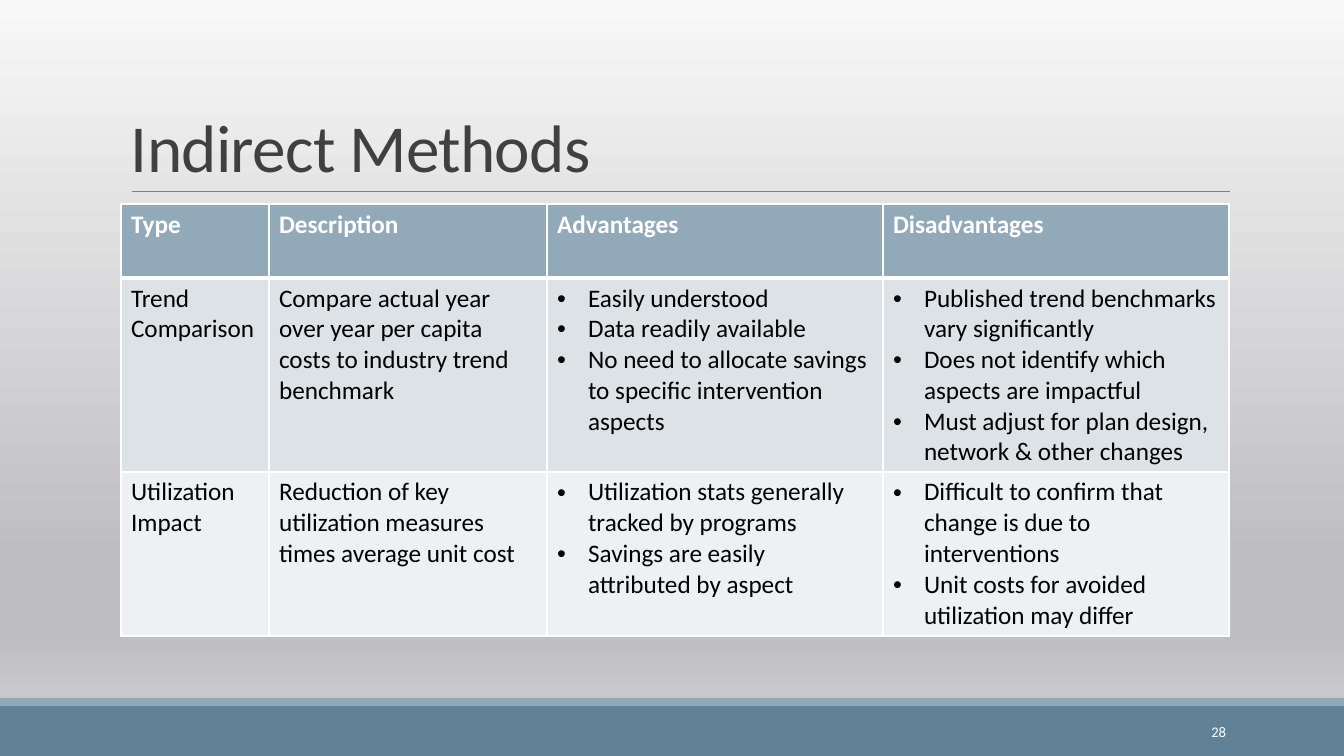
from pptx import Presentation
from pptx import util as u
from pptx.dml.color import RGBColor
from pptx.enum import shapes, text
from pptx.oxml import parse_xml
from pptx.oxml.ns import nsdecls, qn
from lxml import etree

TITLE = "Indirect Methods"
NUMBER = "28"
HEADS = ["Type", "Description", "Advantages", "Disadvantages"]
# A list becomes bullets, a string one plain paragraph.
ROWS = [
    ["Trend Comparison",
     "Compare actual year over year per capita costs to industry trend benchmark",
     ["Easily understood",
      "Data readily available",
      "No need to allocate savings to specific intervention aspects"],
     ["Published trend benchmarks vary significantly",
      "Does not identify which aspects are impactful",
      "Must adjust for plan design, network & other changes"]],
    ["Utilization Impact",
     "Reduction of key utilization measures times average unit cost",
     ["Utilization stats generally tracked by programs",
      "Savings are easily attributed by aspect"],
     ["Difficult to confirm that change is due to interventions",
      "Unit costs for avoided utilization may differ"]],
]


class Theme:
    font = "Calibri"
    white, black, title = "FFFFFF", "000000", "404040"
    dark, accent, rule = "618197", "92A9B9", "808080"
    bands = ["DCE2E6", "EEF1F3"]
    back = [(0, "F8F8F8"), (74, "BEBEC1"), (83, "BEBEC1"), (100, "D4D4D5")]
    head_size, body_size, foot_size = 48, 18, 10.5


WIDE, HIGH = 1344, 756
COLS = [148, 278, 336, 346]
TALL = [74, 194, 164]
LEFT, TOP = 121, 204
INDENT = 31


def px(n):
    return u.Emu(round(n * 914400 / 100.8))


def style(para, size, color, bold=False):
    font = para.font
    font.name, font.size, font.bold = Theme.font, u.Pt(size), bold
    font.color.rgb = RGBColor.from_string(color)


def backdrop(slide):
    fill = slide.background.fill
    fill.gradient()
    fill.gradient_angle = 270
    stops = fill.gradient_stops._gsLst
    for old in list(stops):
        stops.remove(old)
    for spot, color in Theme.back:
        stops.append(parse_xml(
            f'<a:gs {nsdecls("a")} pos="{spot * 1000}"><a:srgbClr val="{color}"/></a:gs>'))


def band(slide, top, tall, color):
    bar = slide.shapes.add_shape(
        shapes.MSO_SHAPE.RECTANGLE, 0, px(top), px(WIDE), px(tall))
    bar.shadow.inherit = False
    bar.fill.solid()
    bar.fill.fore_color.rgb = RGBColor.from_string(color)
    bar.line.fill.background()


def label(slide, box, words, size, color, anchor):
    frame = slide.shapes.add_textbox(*map(px, box)).text_frame
    frame.word_wrap = True
    frame.vertical_anchor = anchor
    para = frame.paragraphs[0]
    para.text = words
    style(para, size, color)
    return para


def rule(slide, left, right, y):
    line = slide.shapes.add_connector(
        shapes.MSO_CONNECTOR.STRAIGHT, px(left), px(y), px(right), px(y))
    line.line.color.rgb = RGBColor.from_string(Theme.rule)
    line.line.width = u.Pt(0.5)
    etree.SubElement(line._element.spPr, qn("a:effectLst"))


def border(cell, tops, base):
    """Draw white edges; tops and base are widths in points."""
    props = cell._tc.get_or_add_tcPr()
    for spot, (side, wide) in enumerate(
            [("L", 1), ("R", 1), ("T", tops), ("B", base)]):
        props.insert(spot, parse_xml(
            f'<a:ln{side} {nsdecls("a")} w="{u.Pt(wide)}"><a:solidFill>'
            f'<a:srgbClr val="{Theme.white}"/></a:solidFill></a:ln{side}>'))


def bullet(para):
    props = para._p.get_or_add_pPr()
    props.set("marL", str(px(INDENT)))
    props.set("indent", str(-px(INDENT)))
    etree.SubElement(props, qn("a:buFont")).set("typeface", "Arial")
    etree.SubElement(props, qn("a:buChar")).set("char", "•")


def write(cell, words, fill, color, bold):
    cell.fill.solid()
    cell.fill.fore_color.rgb = RGBColor.from_string(fill)
    listed = isinstance(words, list)
    items = words if listed else [words]
    frame = cell.text_frame
    for i, item in enumerate(items):
        para = frame.add_paragraph() if i else frame.paragraphs[0]
        para.text = item
        if listed:
            bullet(para)
        style(para, Theme.body_size, color, bold)


def grid(slide):
    table = slide.shapes.add_table(
        len(TALL), len(COLS), px(LEFT), px(TOP), px(sum(COLS)), px(sum(TALL))).table
    for col, wide in zip(table.columns, COLS):
        col.width = px(wide)
    for row, tall in zip(table.rows, TALL):
        row.height = px(tall)
    for r, line in enumerate([HEADS] + ROWS):
        head = r == 0
        fill = Theme.accent if head else Theme.bands[r - 1]
        color = Theme.white if head else Theme.black
        for c, words in enumerate(line):
            cell = table.cell(r, c)
            write(cell, words, fill, color, head)
            border(cell, 3 if r == 1 else 1, 3 if head else 1)


def main():
    deck = Presentation()
    deck.slide_width, deck.slide_height = px(WIDE), px(HIGH)
    slide = deck.slides.add_slide(deck.slide_layouts[6])
    backdrop(slide)
    band(slide, 706, 50, Theme.dark)
    band(slide, 698, 8, Theme.accent)
    rule(slide, 132, 1230, 191)
    title = label(slide, (121, 31, 1109, 160), TITLE, Theme.head_size,
                  Theme.title, text.MSO_ANCHOR.BOTTOM)
    title.line_spacing = 0.85
    title.font._rPr.set("spc", "-50")
    foot = label(slide, (1092, 712, 144, 40), NUMBER, Theme.foot_size,
                 Theme.white, text.MSO_ANCHOR.MIDDLE)
    foot.alignment = text.PP_ALIGN.RIGHT
    grid(slide)
    deck.save("out.pptx")


if __name__ == "__main__":
    main()
